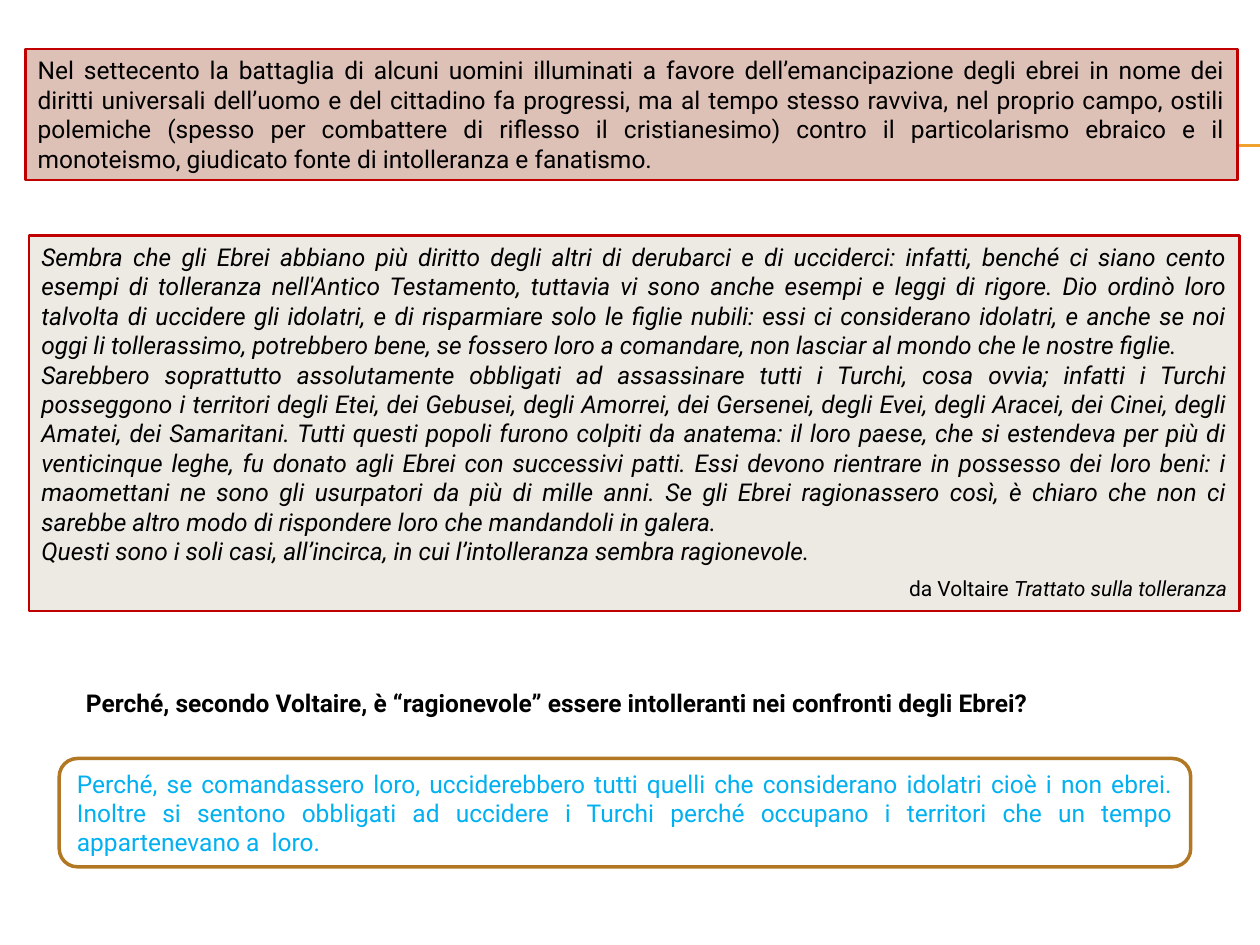
from lxml.etree import SubElement
from pptx import Presentation
from pptx.dml.color import RGBColor
from pptx.enum.shapes import MSO_CONNECTOR, MSO_SHAPE
from pptx.enum.text import MSO_ANCHOR, MSO_AUTO_SIZE, PP_ALIGN
from pptx.oxml.ns import qn
from pptx.util import Inches, Pt

FONT = "Roboto"
RED, BLACK = "C00000", "000000"

INTRODUCTION = "Nel settecento la battaglia di alcuni uomini illuminati a favore dell’emancipazione degli ebrei in nome dei diritti universali dell’uomo e del cittadino fa progressi, ma al tempo stesso ravviva, nel proprio campo, ostili polemiche (spesso per combattere di riflesso il cristianesimo) contro il particolarismo ebraico e il monoteismo, giudicato fonte di intolleranza e fanatismo."
QUOTATION = [
    "Sembra che gli Ebrei abbiano più diritto degli altri di derubarci e di ucciderci: infatti, benché ci siano cento esempi di tolleranza nell'Antico Testamento, tuttavia vi sono anche esempi e leggi di rigore. Dio ordinò loro talvolta di uccidere gli idolatri, e di risparmiare solo le figlie nubili: essi ci considerano idolatri, e anche se noi oggi li tollerassimo, potrebbero bene, se fossero loro a comandare, non lasciar al mondo che le nostre figlie.",
    "Sarebbero soprattutto assolutamente obbligati ad assassinare tutti i Turchi, cosa ovvia; infatti i Turchi posseggono i territori degli Etei, dei Gebusei, degli Amorrei, dei Gersenei, degli Evei, degli Aracei, dei Cinei, degli Amatei, dei Samaritani. Tutti questi popoli furono colpiti da anatema: il loro paese, che si estendeva per più di venticinque leghe, fu donato agli Ebrei con successivi patti. Essi devono rientrare in possesso dei loro beni: i maomettani ne sono gli usurpatori da più di mille anni. Se gli Ebrei ragionassero così, è chiaro che non ci sarebbe altro modo di rispondere loro che mandandoli in galera.",
    "Questi sono i soli casi, all’incirca, in cui l’intolleranza sembra ragionevole.",
]
QUESTION = "Perché, secondo Voltaire, è “ragionevole” essere intolleranti nei confronti degli Ebrei?"
ANSWER = "Perché, se comandassero loro, ucciderebbero tutti quelli che considerano idolatri cioè i non ebrei. Inoltre si sentono obbligati ad uccidere i Turchi perché occupano i territori che un tempo appartenevano a  loro."


def color(hex_string):
    return RGBColor.from_string(hex_string)


def write(paragraph, text, size=14, ink=BLACK, bold=False, italic=False,
          align=PP_ALIGN.JUSTIFY, after=0):
    paragraph.alignment = align
    paragraph.space_after = Pt(after)
    run = paragraph.add_run()
    run.text = text
    run.font.name = FONT
    run.font.size = Pt(size)
    run.font.bold = bold
    run.font.italic = italic
    run.font.color.rgb = color(ink)


def add_panel(slide, box, kind=MSO_SHAPE.RECTANGLE, fill=None, border=None,
              width=1.5, anchor=MSO_ANCHOR.TOP):
    panel = slide.shapes.add_shape(kind, *map(Inches, box))
    panel.shadow.inherit = False
    if fill:
        panel.fill.solid()
        panel.fill.fore_color.rgb = color(fill)
    else:
        panel.fill.background()
    if border:
        panel.line.color.rgb = color(border)
        panel.line.width = Pt(width)
    else:
        panel.line.fill.background()
    frame = panel.text_frame
    frame.word_wrap = True
    frame.auto_size = MSO_AUTO_SIZE.NONE
    frame.vertical_anchor = anchor
    return frame


def add_rule(slide, left, top, right):
    rule = slide.shapes.add_connector(
        MSO_CONNECTOR.STRAIGHT, *map(Inches, (left, top, right, top)))
    rule.line.color.rgb = color("F0A22E")
    rule.line.width = Pt(0.75)
    SubElement(rule._element.spPr, qn("a:effectLst"))


def add_introduction(slide, box):
    frame = add_panel(slide, box, fill="DDC0B6", border=RED)
    write(frame.paragraphs[0], INTRODUCTION)


def add_quotation(slide, box):
    frame = add_panel(slide, box, fill="ECEAE3", border=RED)
    for index, passage in enumerate(QUOTATION):
        paragraph = frame.add_paragraph() if index else frame.paragraphs[0]
        is_last = index == len(QUOTATION) - 1
        write(paragraph, passage, italic=True, after=6 if is_last else 0)
    credit = frame.add_paragraph()
    for text, italic in (("da Voltaire ", False), ("Trattato sulla tolleranza", True)):
        write(credit, text, size=12, italic=italic, align=PP_ALIGN.RIGHT, after=6)


def add_question(slide, box):
    frame = add_panel(slide, box, MSO_SHAPE.ROUNDED_RECTANGLE, anchor=MSO_ANCHOR.MIDDLE)
    write(frame.paragraphs[0], QUESTION, bold=True)


def add_answer(slide, box):
    frame = add_panel(slide, box, MSO_SHAPE.ROUNDED_RECTANGLE, fill="FFFFFF",
                      border="B17722", width=2, anchor=MSO_ANCHOR.MIDDLE)
    write(frame.paragraphs[0], ANSWER, ink="00B0F0")


def main():
    deck = Presentation()
    deck.slide_width, deck.slide_height = Inches(10), Inches(7.5)
    slide = deck.slides.add_slide(deck.slide_layouts[6])
    for top in (1.15, 1.16):
        add_rule(slide, 0.56, top, 10)
    add_quotation(slide, (0.23, 1.87, 9.61, 2.98))
    add_question(slide, (0.55, 5.23, 8.94, 0.7))
    add_answer(slide, (0.47, 6.02, 8.98, 0.86))
    add_introduction(slide, (0.2, 0.39, 9.62, 1.04))
    deck.save("out.pptx")


if __name__ == "__main__":
    main()
